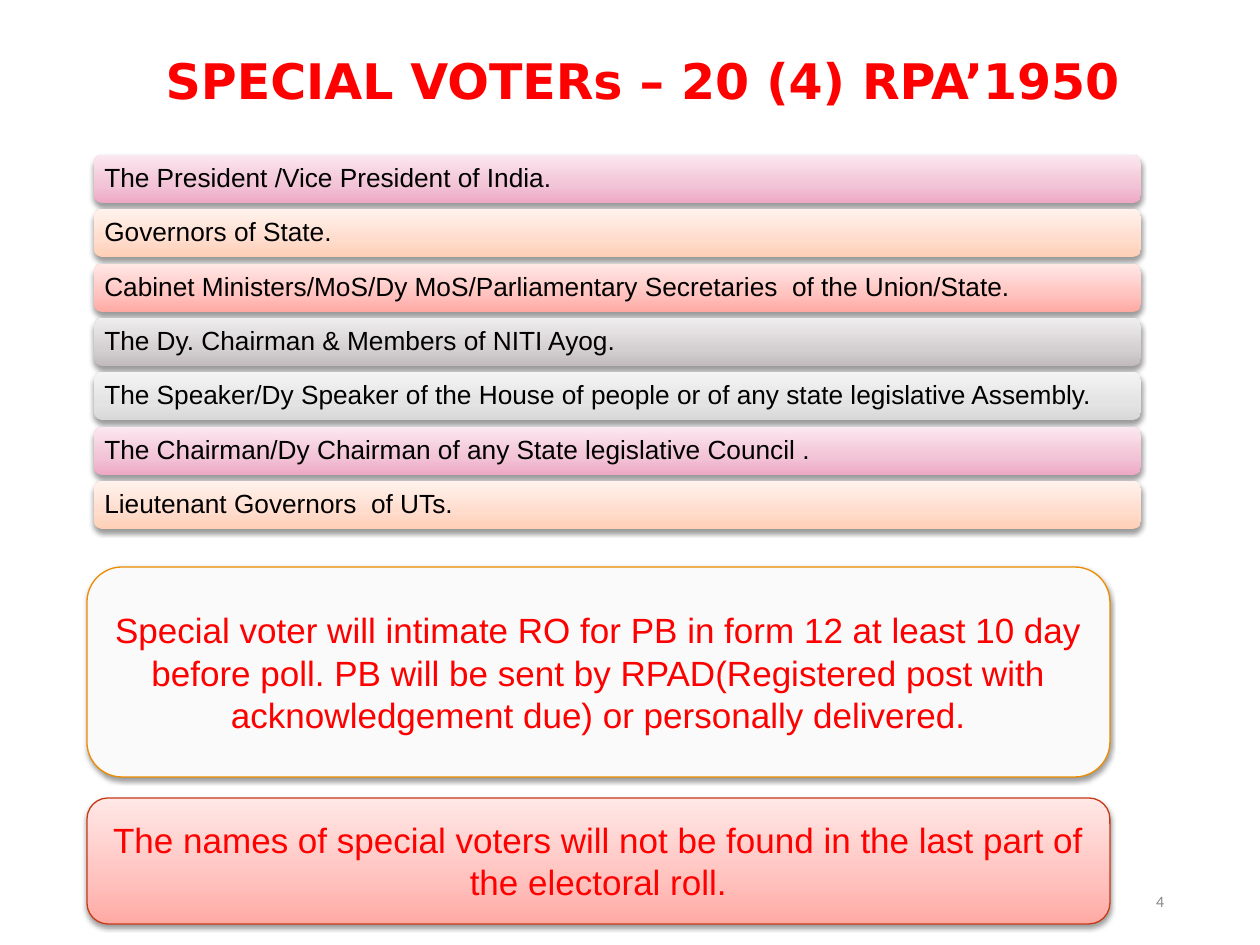
from dataclasses import dataclass
from typing import Optional

from lxml.etree import SubElement
from pptx import Presentation
from pptx.dml.color import RGBColor
from pptx.enum.shapes import MSO_SHAPE as SHAPE
from pptx.enum.text import MSO_ANCHOR as ANCHOR, PP_ALIGN as ALIGN
from pptx.oxml.ns import qn
from pptx.util import Emu, Pt

PX = 914400 / 126  # EMU in one px

COLORS = {
    "red": "FF0000", "black": "000000", "grey": "888888",
    "paper": "FAFAFA", "orange": "ED8C00", "brick": "C73A18",
}
# Gradient stops from the bottom edge to the top edge
GRADIENTS = {
    "pink": ("EFA8C4", "F2C2D5", "FBE7EF"),
    "peach": ("FFCFB6", "FFDCCC", "FFF2EC"),
    "coral": ("FFA9A3", "FFC2BE", "FFE8E6"),
    "stone": ("C2BBBD", "D4D0D1", "EFEDEE"),
    "silver": ("D8D8D8", "E3E3E3", "F4F4F4"),
}
STOPS = (0, 35, 100)


@dataclass
class Label:
    text: str
    size: int
    color: str
    font: str = "Arial"
    align: ALIGN = ALIGN.CENTER
    bold: bool = False
    spacing: float = 1.0
    margins: tuple[int, int] = (13, 6)  # horizontal, vertical


@dataclass
class Panel:
    box: tuple[int, int, int, int]
    fill: str
    label: Label
    line: Optional[str] = None


def px(n: float) -> Emu:
    return Emu(round(n * PX))


def rgb(name: str) -> RGBColor:
    return RGBColor.from_string(COLORS[name])


def write(sp, label: Label) -> None:
    tf = sp.text_frame
    tf.word_wrap = True
    tf.vertical_anchor = ANCHOR.MIDDLE
    tf.margin_left = tf.margin_right = px(label.margins[0])
    tf.margin_top = tf.margin_bottom = px(label.margins[1])
    p = tf.paragraphs[0]
    p.text = label.text
    p.alignment = label.align
    p.line_spacing = label.spacing
    p.font.name = label.font
    p.font.size = Pt(label.size)
    p.font.bold = label.bold
    p.font.color.rgb = rgb(label.color)


def add_text(s, box: tuple[int, int, int, int], label: Label) -> None:
    write(s.shapes.add_textbox(*map(px, box)), label)


def fill_gradient(sp, colors: tuple[str, ...]) -> None:
    sp.fill.gradient()
    sp.fill.gradient_angle = 90
    stops = sp._element.spPr.find(".//" + qn("a:gsLst"))
    for old in list(stops):
        stops.remove(old)
    for pos, color in zip(STOPS, colors):
        gs = SubElement(stops, qn("a:gs"), pos=str(pos * 1000))
        SubElement(gs, qn("a:srgbClr"), val=color)


def add_shadow(sp) -> None:
    sp.shadow.inherit = False
    effects = sp._element.spPr.find(qn("a:effectLst"))
    shadow = SubElement(effects, qn("a:outerShdw"), blurRad=str(Pt(3.1)),
                        dist=str(Pt(1.6)), dir="5400000", rotWithShape="0")
    color = SubElement(shadow, qn("a:srgbClr"), val=COLORS["black"])
    SubElement(color, qn("a:alpha"), val="38000")


def add_panel(s, panel: Panel) -> None:
    sp = s.shapes.add_shape(SHAPE.ROUNDED_RECTANGLE, *map(px, panel.box))
    if panel.fill in GRADIENTS:
        fill_gradient(sp, GRADIENTS[panel.fill])
    else:
        sp.fill.solid()
        sp.fill.fore_color.rgb = rgb(panel.fill)
    if panel.line:
        sp.line.color.rgb = rgb(panel.line)
        sp.line.width = Pt(0.75)
    else:
        sp.line.fill.background()
    add_shadow(sp)
    write(sp, panel.label)


VOTERS = [
    "The President /Vice President of India.",
    "Governors of State.",
    "Cabinet Ministers/MoS/Dy MoS/Parliamentary Secretaries  of the Union/State.",
    "The Dy. Chairman & Members of NITI Ayog.",
    "The Speaker/Dy Speaker of the House of people or of any state legislative Assembly.",
    "The Chairman/Dy Chairman of any State legislative Council .",
    "Lieutenant Governors  of UTs.",
]
FIRST_TOP, LAST_TOP = 155, 481

NOTES = [
    Panel((87, 567, 1023, 210), "paper",
          Label("Special voter will intimate RO for PB in form 12 at least 10 day "
                "before poll. PB will be sent by RPAD(Registered post with "
                "acknowledgement due) or personally delivered.", 20, "red"), "orange"),
    Panel((87, 798, 1023, 126), "coral",
          Label("The names of special voters will not be found in the last part of "
                "the electoral roll.", 20, "red"), "brick"),
]


def main() -> None:
    prs = Presentation()
    prs.slide_width, prs.slide_height = px(1260), px(945)
    s = prs.slides.add_slide(prs.slide_layouts[6])

    # Title
    add_text(s, (48, 41, 1189, 85),
             Label("SPECIAL VOTERs – 20 (4) RPA’1950", 28, "red", "DejaVu Sans",
                   bold=True, spacing=0.9))

    # List of special voters, colours in turn
    names = list(GRADIENTS)
    pitch = (LAST_TOP - FIRST_TOP) / (len(VOTERS) - 1)
    for i, voter in enumerate(VOTERS):
        top = round(FIRST_TOP + i * pitch)
        label = Label(voter, 15, "black", align=ALIGN.LEFT, spacing=0.9, margins=(8, 8))
        add_panel(s, Panel((94, top, 1047, 48), names[i % len(names)], label))

    # Slide number
    add_text(s, (890, 876, 283, 50),
             Label("4", 9, "grey", "Calibri", ALIGN.RIGHT, margins=(9, 5)))

    # Notes below the list
    for note in NOTES:
        add_panel(s, note)

    prs.save("out.pptx")


if __name__ == "__main__":
    main()
